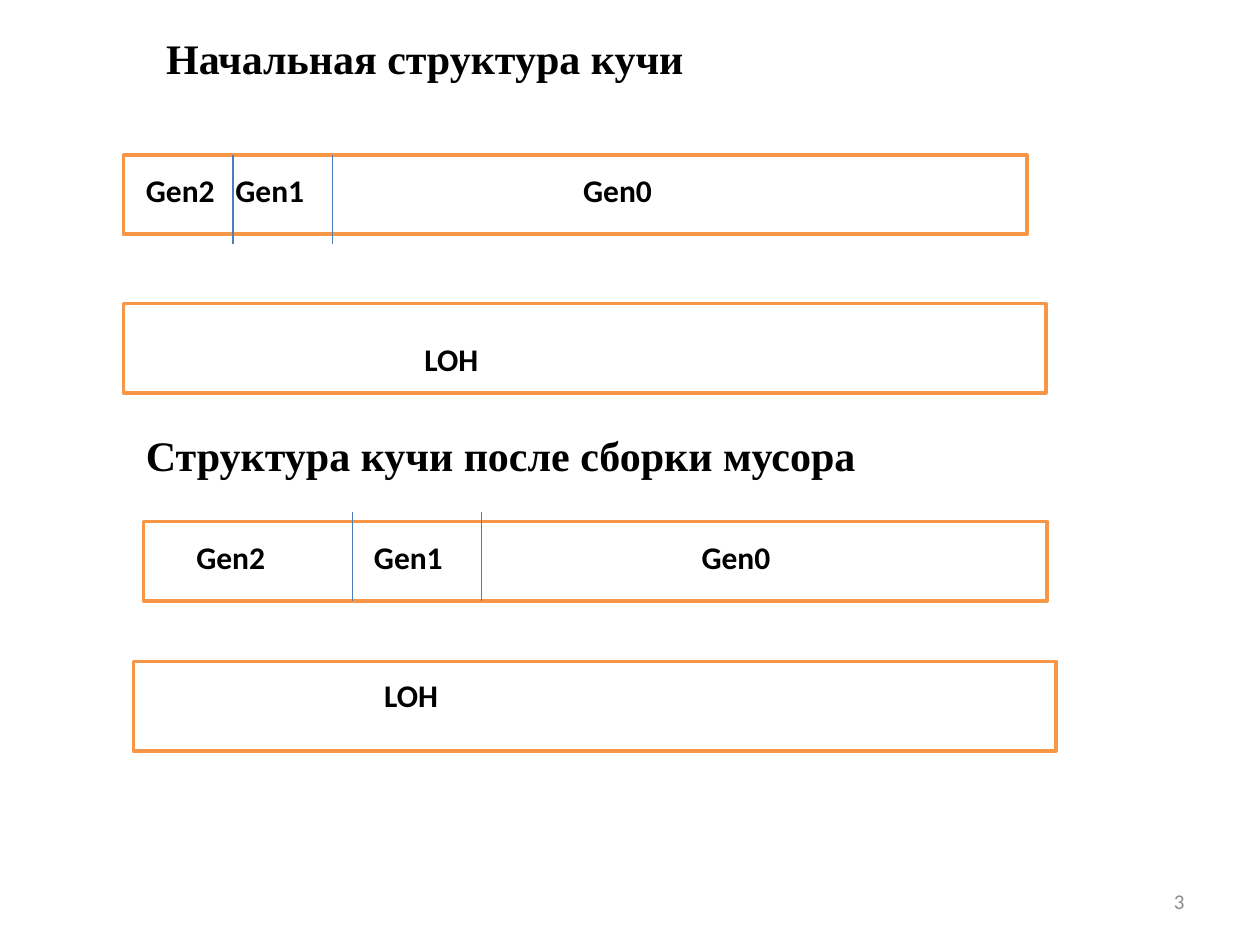
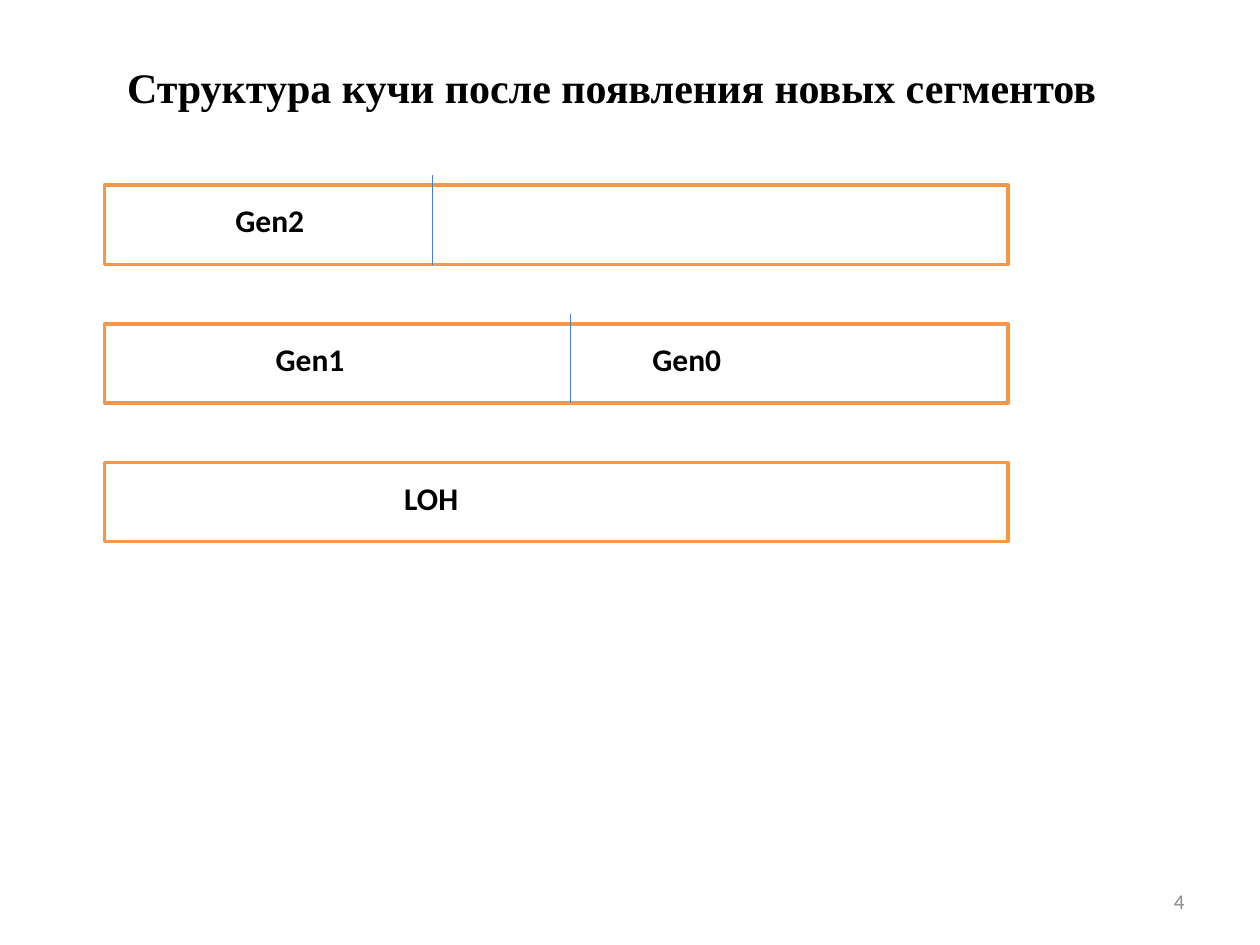
"""Builds two slides on how the heap is divided before and after garbage collection."""
from lxml import etree
from pptx import Presentation
from pptx.dml.color import RGBColor
from pptx.enum.shapes import MSO_CONNECTOR, MSO_SHAPE
from pptx.enum.text import MSO_ANCHOR, MSO_AUTO_SIZE, PP_ALIGN
from pptx.oxml.ns import qn
from pptx.util import Pt

RECTANGLE = MSO_SHAPE.RECTANGLE
STRAIGHT = MSO_CONNECTOR.STRAIGHT
MIDDLE = MSO_ANCHOR.MIDDLE
GROW = MSO_AUTO_SIZE.SHAPE_TO_FIT_TEXT
LEFT, RIGHT = PP_ALIGN.LEFT, PP_ALIGN.RIGHT

BLACK, WHITE, GREY = "000000", "FFFFFF", "8C8C8C"
ORANGE, BLUE = "F79646", "4B7EBC"
HEADING_FONT, BODY_FONT = "Times New Roman", "Calibri"

SMALL_BAR, LARGE_BAR = (516.24, 45.36), (527.04, 51.12)
DIVIDER_HEIGHT = 51.12
OVERHANG = 5.76
LABEL_INSET = 5.76
GEN_WIDTH, LOH_WIDTH, LABEL_HEIGHT = 62.64, 130.32, 28.8
HEADING_HEIGHT = 36
NUMBER_BOX = (516.24, 500.4, 167.76, 28.8)
SEGMENT_TOP, SEGMENT_STEP = 105.84, 79.2


def segment(left, top, size=SMALL_BAR, labels=(), dividers=(),
            rise=OVERHANG, inset=LABEL_INSET):
    """Describe one heap segment with its labels and dividing lines."""
    return {"left": left, "top": top, "size": size, "labels": labels,
            "dividers": dividers, "rise": rise, "inset": inset}


NEW_SEGMENTS = [
    ([("Gen2", 127.44)], [246.96]),
    ([("Gen1", 150.48), ("Gen0", 365.76)], [326.16]),
    ([("LOH", 223.92)], []),
]

SLIDES = [
    {
        "number": "3",
        "headings": [
            ("Начальная структура кучи", 87.84, 15.12, 572.4),
            ("Структура кучи после сборки мусора", 76.32, 241.92, 538.56),
        ],
        "segments": [
            segment(70.56, 88.56, rise=0, dividers=[133.2, 190.08],
                    labels=[("Gen2", 76.32), ("Gen1", 127.44), ("Gen0", 326.16)]),
            segment(70.56, 173.52, LARGE_BAR, [("LOH", 235.44)], inset=17.28),
            segment(82.08, 298.08, dividers=[201.6, 275.04],
                    labels=[("Gen2", 105.12), ("Gen1", 206.64), ("Gen0", 393.84)]),
            segment(76.32, 378, LARGE_BAR, [("LOH", 212.4)], inset=5.04),
        ],
    },
    {
        "number": "4",
        "headings": [
            ("Структура кучи после появления новых сегментов", 65.52, 31.68, 635.04),
        ],
        "segments": [
            segment(59.76, SEGMENT_TOP + row * SEGMENT_STEP,
                    labels=labels, dividers=dividers)
            for row, (labels, dividers) in enumerate(NEW_SEGMENTS)
        ],
    },
]


def color(value):
    """Turn a hex string into a colour."""
    return RGBColor.from_string(value)


def points(*values):
    """Turn numbers into lengths in points."""
    return [Pt(value) for value in values]


def add_text(page, text, place, size, font=BODY_FONT, ink=BLACK, bold=True, align=LEFT):
    """Add a one-line text box and return its frame."""
    frame = page.shapes.add_textbox(*points(*place)).text_frame
    frame.word_wrap = True
    para = frame.paragraphs[0]
    para.alignment = align
    span = para.add_run()
    span.text = text
    span.font.name = font
    span.font.size = Pt(size)
    span.font.bold = bold
    span.font.color.rgb = color(ink)
    return frame


def add_bar(page, left, top, size):
    """Add the outlined bar of a segment."""
    bar = page.shapes.add_shape(RECTANGLE, *points(left, top, *size))
    bar.shadow.inherit = False
    bar.fill.solid()
    bar.fill.fore_color.rgb = color(WHITE)
    bar.line.color.rgb = color(ORANGE)
    bar.line.width = Pt(2)


def add_divider(page, x, top):
    """Add a vertical line between two generations."""
    divider = page.shapes.add_connector(
        STRAIGHT, *points(x, top, x, top + DIVIDER_HEIGHT))
    divider.line.color.rgb = color(BLUE)
    divider.line.width = Pt(0.75)
    etree.SubElement(divider._element.spPr, qn("a:effectLst"))


def add_segment(page, part):
    """Draw a segment: bar, dividers, then labels."""
    top = part["top"]
    add_bar(page, part["left"], top, part["size"])
    for x in part["dividers"]:
        add_divider(page, x, top - part["rise"])
    for text, left in part["labels"]:
        width = LOH_WIDTH if text == "LOH" else GEN_WIDTH
        frame = add_text(page, text, (left, top + part["inset"], width, LABEL_HEIGHT), 18)
        frame.auto_size = GROW


def add_page(deck, content):
    """Add one slide with headings, segments and its number."""
    page = deck.slides.add_slide(deck.slide_layouts[6])
    for text, left, top, width in content["headings"]:
        frame = add_text(page, text, (left, top, width, HEADING_HEIGHT), 24, HEADING_FONT)
        frame.auto_size = GROW
    for part in content["segments"]:
        add_segment(page, part)
    number = add_text(page, content["number"], NUMBER_BOX, 12,
                      ink=GREY, bold=False, align=RIGHT)
    number.vertical_anchor = MIDDLE


def main():
    """Build and save the deck."""
    deck = Presentation()
    deck.slide_width, deck.slide_height = points(720, 540)
    for content in SLIDES:
        add_page(deck, content)
    deck.save("out.pptx")


if __name__ == "__main__":
    main()
